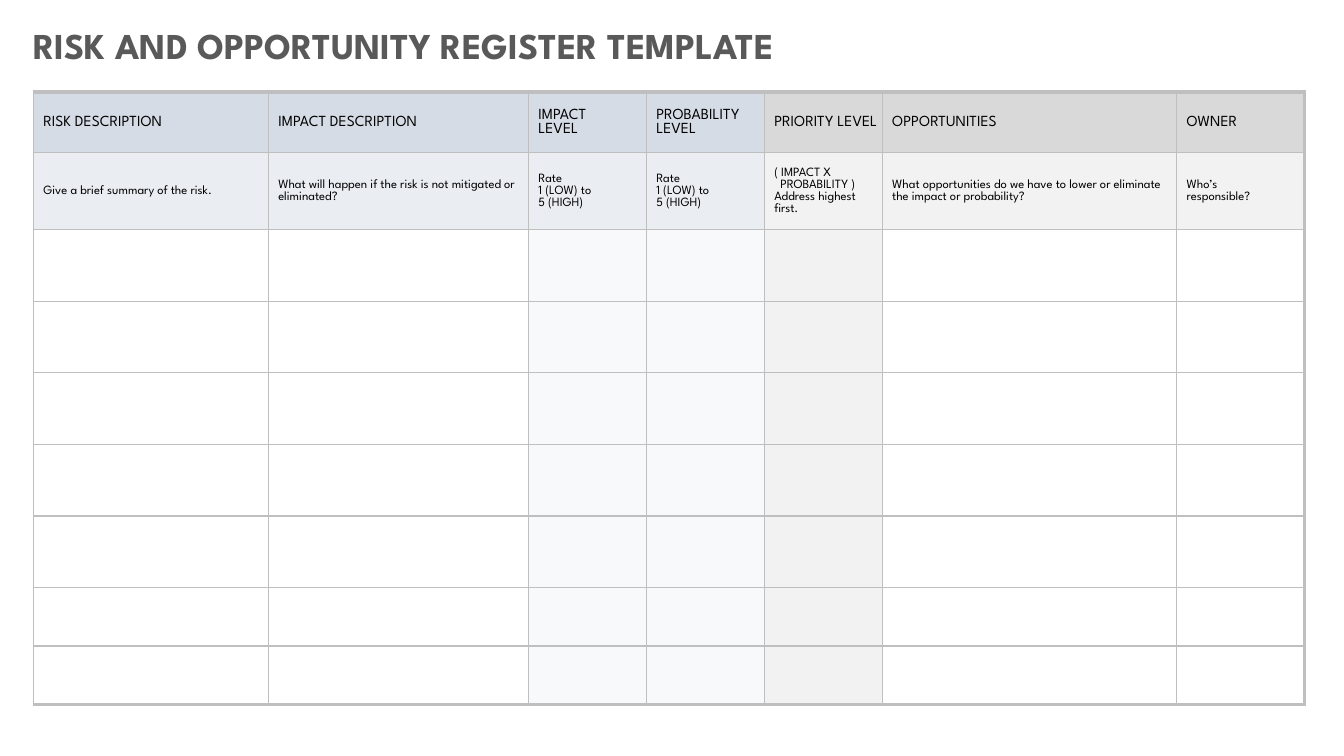
from lxml import etree
from pptx import Presentation
from pptx.dml.color import RGBColor
from pptx.enum.text import MSO_ANCHOR, MSO_AUTO_SIZE, PP_ALIGN
from pptx.oxml.ns import qn
from pptx.util import Inches, Pt

MIDDLE, BOTTOM = MSO_ANCHOR.MIDDLE, MSO_ANCHOR.BOTTOM
GROW, LEFT = MSO_AUTO_SIZE.SHAPE_TO_FIT_TEXT, PP_ALIGN.LEFT

# Content: each cell is a list of paragraphs, each paragraph a list of lines
TITLE = "RISK AND OPPORTUNITY REGISTER TEMPLATE"
RATING = [["Rate", "1 (LOW) to", "5 (HIGH)"]]
INDENTED = "PROBABILITY )"
# width, heading, guidance, heading fill, guidance fill, entry fill
REGISTER = [
    (2.33, [["RISK DESCRIPTION"]], [["Give a brief summary of the risk."]],
     "blue", "pale_blue", "white"),
    (2.58, [["IMPACT DESCRIPTION"]],
     [["What will happen if the risk is not mitigated or eliminated?"]],
     "blue", "pale_blue", "white"),
    (1.17, [["IMPACT", "LEVEL"]], RATING, "blue", "pale_blue", "faint_blue"),
    (1.17, [["PROBABILITY LEVEL"]], RATING, "blue", "pale_blue", "faint_blue"),
    (1.17, [["PRIORITY LEVEL"]],
     [["( IMPACT X"], [INDENTED], ["Address highest first."]],
     "grey", "pale_grey", "pale_grey"),
    (2.92, [["OPPORTUNITIES"]],
     [["What opportunities do we have to lower or eliminate the impact or probability?"]],
     "grey", "pale_grey", "white"),
    (1.27, [["OWNER"]], [["Who’s"], ["responsible?"]], "grey", "pale_grey", "white"),
]
ROW_HEIGHTS = [0.6, 0.77] + [0.71] * 5 + [0.58] * 2

FONT = "League Spartan"
COLORS = {"title": "595959", "text": "000000", "border": "BFBFBF",
          "blue": "D6DCE5", "pale_blue": "EAEEF3", "faint_blue": "F7F9FB",
          "grey": "D9D9D9", "pale_grey": "F2F2F2", "white": "FFFFFF"}


def color(name):
    return RGBColor.from_string(COLORS[name])


def style_font(font, size, color_name, bold=False):
    font.name, font.size, font.bold = FONT, Pt(size), bold
    font.color.rgb = color(color_name)


def write_cell(cell, paragraphs, size):
    cell.margin_left, cell.margin_right = Inches(0.1), Inches(0.01)
    cell.margin_top, cell.margin_bottom = Inches(0.01), 0
    cell.vertical_anchor = MIDDLE
    frame = cell.text_frame
    for number, lines in enumerate(paragraphs):
        paragraph = frame.paragraphs[0] if number == 0 else frame.add_paragraph()
        if lines == [INDENTED]:
            paragraph._p.get_or_add_pPr().set("marL", str(Inches(0.06)))
        for line_number, line in enumerate(lines):
            if line_number:
                paragraph.add_line_break()
            run = paragraph.add_run()
            run.text = line
            style_font(run.font, size, "text")


def set_borders(cell, widths):
    properties = cell._tc.get_or_add_tcPr()
    for position, (side, width) in enumerate(widths.items()):
        line = etree.Element(qn(f"a:ln{side}"), w=str(Pt(width)))
        fill = etree.SubElement(line, qn("a:solidFill"))
        etree.SubElement(fill, qn("a:srgbClr"), val=COLORS["border"])
        properties.insert(position, line)


prs = Presentation()
prs.slide_width, prs.slide_height = Inches(13.33), Inches(7.5)
slide = prs.slides.add_slide(prs.slide_layouts[5])

# Title
title = slide.shapes.title
title.left, title.top = Inches(0.23), Inches(0.17)
title.width, title.height = Inches(8.66), Inches(0.54)
title.text_frame.auto_size = GROW
title.text_frame.word_wrap = True
title.text_frame.vertical_anchor = BOTTOM
heading = title.text_frame.paragraphs[0]
heading.alignment = LEFT
heading_run = heading.add_run()
heading_run.text = TITLE
style_font(heading_run.font, 26, "title", bold=True)

# Register table
last_row, last_column = len(ROW_HEIGHTS) - 1, len(REGISTER) - 1
register = slide.shapes.add_table(
    len(ROW_HEIGHTS), len(REGISTER), Inches(0.33), Inches(0.91),
    Inches(sum(column[0] for column in REGISTER)), Inches(sum(ROW_HEIGHTS))).table
register.first_row = register.horz_banding = False
for row, height in zip(register.rows, ROW_HEIGHTS):
    row.height = Inches(height)

for c, (width, name, guidance, name_fill, guidance_fill, entry_fill) in enumerate(REGISTER):
    register.columns[c].width = Inches(width)
    write_cell(register.cell(0, c), name, 11)
    write_cell(register.cell(1, c), guidance, 9)
    for r in range(len(ROW_HEIGHTS)):
        cell = register.cell(r, c)
        cell.fill.solid()
        cell.fill.fore_color.rgb = color((name_fill, guidance_fill, entry_fill)[min(r, 2)])
        set_borders(cell, {"L": 1, "R": 2.25 if c == last_column else 1,
                           "T": 3 if r == 0 else 1,
                           "B": 2.25 if r == last_row else 1})

prs.save("out.pptx")
